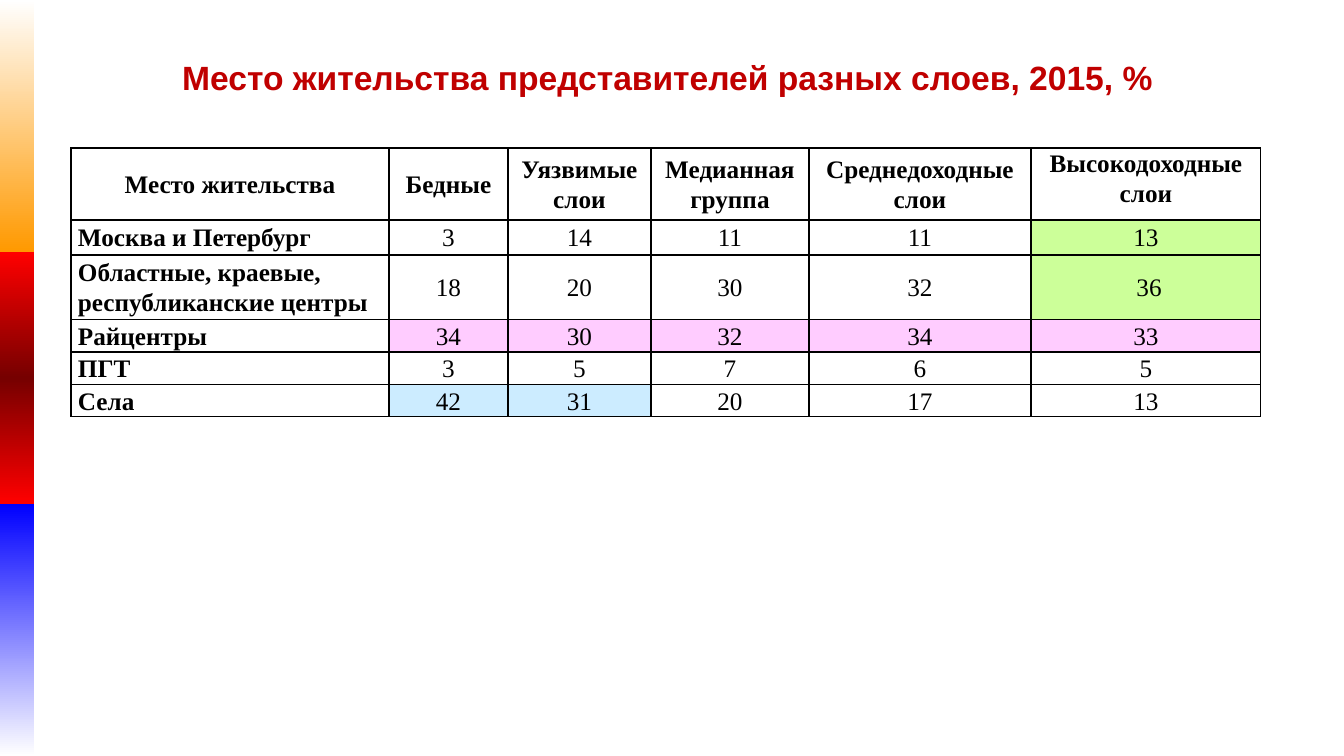
"""Build a slide with a table of where members of each income group live."""
from dataclasses import dataclass

from lxml import etree
from pptx import Presentation
from pptx import util as u
from pptx.dml.color import RGBColor
from pptx.enum import shapes, text
from pptx.oxml import ns


@dataclass(frozen=True)
class Theme:
    title_font: str = "Arial"
    table_font: str = "Times New Roman"
    title_size: int = 24
    table_size: int = 18
    title: str = "C00000"
    ink: str = "000000"
    plain: str = "FFFFFF"
    green: str = "CCFF99"
    pink: str = "FFCCFF"
    blue: str = "CCECFF"
    bars: tuple = (
        ("FFFFFF", "FF9900"),
        ("FF0000", "760000", "FF0000"),
        ("0000FF", "FFFFFF"),
    )


theme = Theme()
PX = 914400 / 100.8


def px(*lengths):
    return [u.Emu(round(length * PX)) for length in lengths]


def style(paragraph, font, size, color, bold):
    for span in paragraph.runs:
        span.font.name = font
        span.font.size = u.Pt(size)
        span.font.bold = bold
        span.font.color.rgb = RGBColor.from_string(color)


deck = Presentation()
deck.slide_width, deck.slide_height = px(1344, 756)
page = deck.slides.add_slide(deck.slide_layouts[6])

BAR_WIDTH, BAR_HEIGHT = 34, 252
for index, colors in enumerate(theme.bars):
    bar = page.shapes.add_shape(
        shapes.MSO_SHAPE.RECTANGLE, *px(0, index * BAR_HEIGHT, BAR_WIDTH, BAR_HEIGHT)
    )
    bar.shadow.inherit = False
    bar.line.fill.background()
    bar.fill.gradient()
    bar.fill.gradient_angle = 270
    stops = bar._element.spPr.find(".//" + ns.qn("a:gsLst"))
    for stop in list(stops):
        stops.remove(stop)
    for place, color in enumerate(colors):
        position = 100000 * place // (len(colors) - 1)
        stop = etree.SubElement(stops, ns.qn("a:gs"), pos=str(position))
        etree.SubElement(stop, ns.qn("a:srgbClr"), val=color)

title = page.shapes.add_textbox(*px(92, 52, 1151, 50))
title.text_frame.word_wrap = True
title.text_frame.text = "Место жительства представителей разных слоев, 2015, %"
para = title.text_frame.paragraphs[0]
para.alignment = text.PP_ALIGN.CENTER
style(para, theme.title_font, theme.title_size, theme.title, True)

rows = [
    ("Место жительства", "Бедные", "Уязвимые слои", "Медианная группа",
     "Среднедоходные слои", "Высокодоходные слои"),
    ("Москва и Петербург", "3", "14", "11", "11", "13"),
    ("Областные, краевые, республиканские центры", "18", "20", "30", "32", " 36"),
    ("Райцентры", "34", "30", "32", "34", "33"),
    ("ПГТ", "3", "5", "7", "6", "5"),
    ("Села", "42", "31", "20", "17", "13"),
]
column_widths = [318, 119, 143, 158, 222, 230]
row_heights = [72, 35, 64, 32, 32, 32]
LAST_COLUMN = len(column_widths) - 1
highlights = {(row, LAST_COLUMN): theme.green for row in (1, 2)}
highlights.update({(3, column): theme.pink for column in range(1, LAST_COLUMN + 1)})
highlights.update({(5, column): theme.blue for column in (1, 2)})

frame = page.shapes.add_table(
    len(rows), len(column_widths), *px(71, 148, sum(column_widths), sum(row_heights))
)
table = frame.table
table.first_row = table.horz_banding = False
for column, width in zip(table.columns, px(*column_widths)):
    column.width = width
for row, height in zip(table.rows, px(*row_heights)):
    row.height = height

for row_index, words in enumerate(rows):
    for column_index, word in enumerate(words):
        cell = table.cell(row_index, column_index)
        header = row_index == 0
        label = column_index == 0
        last = column_index == LAST_COLUMN

        cell.margin_top = cell.margin_bottom = 0
        cell.margin_left, cell.margin_right = px(0, 0) if last else px(7, 7)
        cell.vertical_anchor = (
            text.MSO_ANCHOR.TOP if header and last else text.MSO_ANCHOR.MIDDLE
        )
        for side in ("a:lnL", "a:lnR", "a:lnT", "a:lnB"):
            border = etree.SubElement(
                cell._tc.get_or_add_tcPr(), ns.qn(side), w=str(u.Pt(1))
            )
            paint = etree.SubElement(border, ns.qn("a:solidFill"))
            etree.SubElement(paint, ns.qn("a:srgbClr"), val=theme.ink)
        cell.fill.solid()
        cell.fill.fore_color.rgb = RGBColor.from_string(
            highlights.get((row_index, column_index), theme.plain)
        )

        cell.text_frame.text = word
        para = cell.text_frame.paragraphs[0]
        para.alignment = (
            text.PP_ALIGN.LEFT if label and not header else text.PP_ALIGN.CENTER
        )
        para.line_spacing = 1.07
        para.space_after = u.Pt(8 if header else 0)
        style(para, theme.table_font, theme.table_size, theme.ink, header or label)

deck.save("out.pptx")
